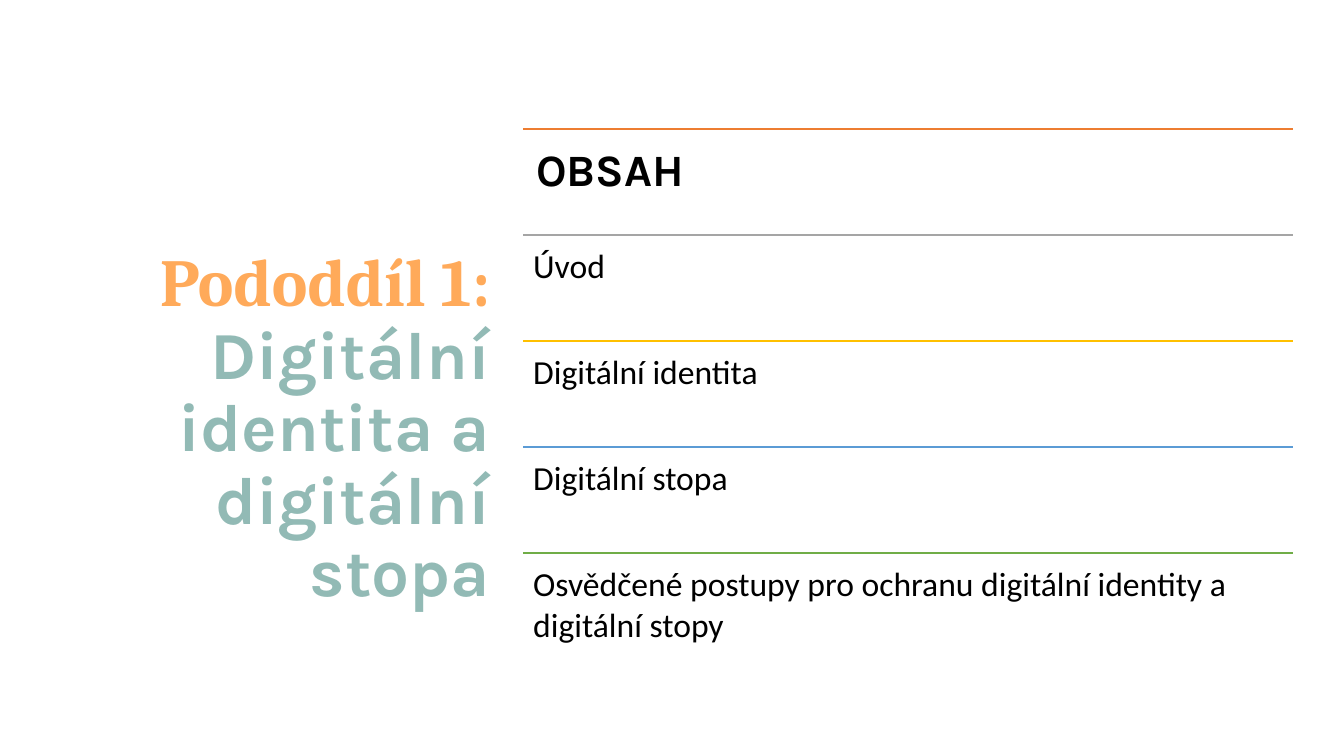
import pptx
import pptx.dml.color
import pptx.enum.shapes
import pptx.enum.text
import pptx.oxml.ns
import pptx.util
from dataclasses import dataclass
from lxml import etree

Inches = pptx.util.Inches


@dataclass(frozen=True)
class Theme:
    heading_font: str = "Karla"
    accent_font: str = "Cambria"
    body_font: str = "Calibri"
    accent: str = "FFAA5A"
    heading: str = "92BAB5"
    body: str = "000000"
    rules: tuple = ("ED7D31", "A5A5A5", "FFC000", "5B9BD5", "70AD47")
    title_size: int = 48
    contents_size: int = 32
    topic_size: int = 24
    rule_width: int = 1


THEME = Theme()
CONTENTS = (
    "OBSAH",
    "Úvod",
    "Digitální identita",
    "Digitální stopa",
    "Osvědčené postupy pro ochranu digitální identity a digitální stopy",
)


def style_run(run, font, size, color, bold=False):
    run.font.name = font
    run.font.size = pptx.util.Pt(size)
    run.font.color.rgb = pptx.dml.color.RGBColor.from_string(color)
    run.font.bold = bold


def add_text_frame(slide, left, top, width, height):
    frame = slide.shapes.add_textbox(
        Inches(left), Inches(top), Inches(width), Inches(height)).text_frame
    frame.word_wrap = True
    return frame


def add_section_title(slide, left, top, width, height):
    frame = add_text_frame(slide, left, top, width, height)
    frame.vertical_anchor = pptx.enum.text.MSO_ANCHOR.MIDDLE
    frame.margin_top = Inches(0.77)
    title = frame.paragraphs[0]
    title.alignment = pptx.enum.text.PP_ALIGN.RIGHT
    title.line_spacing = 0.9
    for words, font, color in (
        ("Pododdíl 1:", THEME.accent_font, THEME.accent),
        (" Digitální identita a digitální stopa", THEME.heading_font, THEME.heading),
    ):
        run = title.add_run()
        run.text = words
        style_run(run, font, THEME.title_size, color, bold=True)


def add_rule(slide, left, top, width, color):
    rule = slide.shapes.add_connector(
        pptx.enum.shapes.MSO_CONNECTOR.STRAIGHT,
        Inches(left), Inches(top), Inches(left + width), Inches(top))
    rule.line.color.rgb = pptx.dml.color.RGBColor.from_string(color)
    rule.line.width = pptx.util.Pt(THEME.rule_width)
    etree.SubElement(rule._element.spPr, pptx.oxml.ns.qn("a:effectLst"))


def add_contents(slide, left, top, width, height):
    row_height = height / len(CONTENTS)
    for index, (entry, color) in enumerate(zip(CONTENTS, THEME.rules)):
        is_heading = index == 0
        row_top = top + index * row_height
        add_rule(slide, left, row_top, width, color)
        frame = add_text_frame(slide, left, row_top, width, row_height)
        inset = Inches(0.13 if is_heading else 0.1)
        frame.margin_left = frame.margin_right = inset
        frame.margin_top = frame.margin_bottom = inset
        frame.text = entry
        style_run(
            frame.paragraphs[0].runs[0],
            THEME.heading_font if is_heading else THEME.body_font,
            THEME.contents_size if is_heading else THEME.topic_size,
            THEME.body,
            bold=is_heading)


def main():
    deck = pptx.Presentation()
    deck.slide_width = Inches(13.33)
    deck.slide_height = Inches(7.5)
    slide = deck.slides.add_slide(deck.slide_layouts[6])
    add_section_title(slide, 0.38, 0.85, 4.58, 6.11)
    add_contents(slide, 5.19, 1.28, 7.63, 5.26)
    deck.save("out.pptx")


if __name__ == "__main__":
    main()
